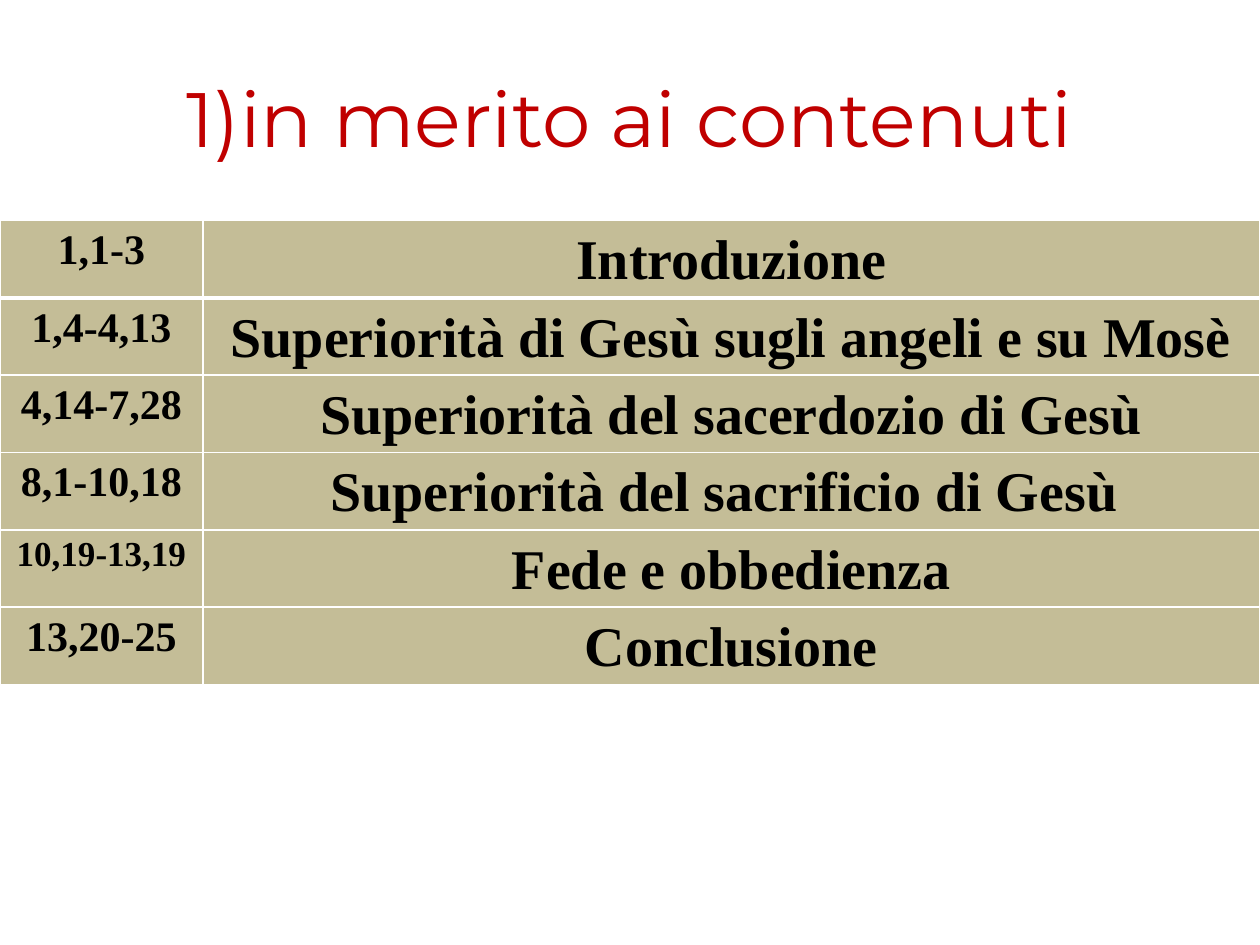
from lxml.etree import SubElement
from pptx import Presentation
from pptx.dml.color import RGBColor
from pptx.enum.text import MSO_ANCHOR, PP_ALIGN
from pptx.oxml.ns import qn
from pptx.util import Inches, Pt

# Content
HEADING = "1)in merito ai contenuti"
SECTIONS = [  # verses, verse text size, subject
    ("1,1-3", 24, "Introduzione"),
    ("1,4-4,13", 24, "Superiorità di Gesù sugli angeli e su Mosè"),
    ("4,14-7,28", 24, "Superiorità del sacerdozio di Gesù"),
    ("8,1-10,18", 24, "Superiorità del sacrificio di Gesù "),
    ("10,19-13,19", 20, "Fede e obbedienza"),
    ("13,20-25", 24, "Conclusione"),
]
SUBJECT_SIZE = 32
COLUMN_WIDTHS = (1.61, 8.39)
ROW_HEIGHT = 0.61
RED, BLACK, WHITE, SAND = "C00000", "000000", "FFFFFF", "C4BD97"


def rgb(hex_color):
    return RGBColor.from_string(hex_color)


def style_paragraph(paragraph, font_name, size, color, bold=False):
    paragraph.alignment = PP_ALIGN.CENTER
    for run in paragraph.runs:
        run.font.name = font_name
        run.font.size = Pt(size)
        run.font.bold = bold
        run.font.color.rgb = rgb(color)


def set_borders(cell, widths):
    properties = cell._tc.get_or_add_tcPr()
    for side, width in widths.items():
        line = SubElement(properties, qn(f"a:ln{side}"), w=str(Pt(width)))
        fill = SubElement(line, qn("a:solidFill"))
        SubElement(fill, qn("a:srgbClr"), val=WHITE)


def fill_cell(cell, text, size, top_border, bottom_border):
    set_borders(cell, {"L": 1, "R": 1, "T": top_border, "B": bottom_border})
    cell.fill.solid()
    cell.fill.fore_color.rgb = rgb(SAND)
    cell.margin_left = cell.margin_right = Inches(0.07)
    cell.margin_top = cell.margin_bottom = 0
    cell.text_frame.text = text
    paragraph = cell.text_frame.paragraphs[0]
    paragraph.line_spacing = 1.15
    style_paragraph(paragraph, "Times New Roman", size, BLACK, bold=True)


prs = Presentation()
prs.slide_width, prs.slide_height = Inches(10), Inches(7.5)
slide = prs.slides.add_slide(prs.slide_layouts[6])

# Heading
heading = slide.shapes.add_textbox(Inches(0.5), Inches(0.3), Inches(9), Inches(1.25))
heading.text_frame.word_wrap = True
heading.text_frame.vertical_anchor = MSO_ANCHOR.MIDDLE
heading.text_frame.text = HEADING
style_paragraph(heading.text_frame.paragraphs[0], "Montserrat", 44, RED)

# Table of sections, with a thick rule under the first row
sections = slide.shapes.add_table(
    len(SECTIONS), len(COLUMN_WIDTHS), 0, Inches(1.75),
    Inches(sum(COLUMN_WIDTHS)), Inches(ROW_HEIGHT * len(SECTIONS))).table
for column, width in zip(sections.columns, COLUMN_WIDTHS):
    column.width = Inches(width)
for index, (verses, verses_size, subject) in enumerate(SECTIONS):
    sections.rows[index].height = Inches(ROW_HEIGHT)
    top_border = 3 if index == 1 else 1
    bottom_border = 3 if index == 0 else 1
    for column, (text, size) in enumerate([(verses, verses_size), (subject, SUBJECT_SIZE)]):
        fill_cell(sections.cell(index, column), text, size, top_border, bottom_border)

prs.save("out.pptx")
